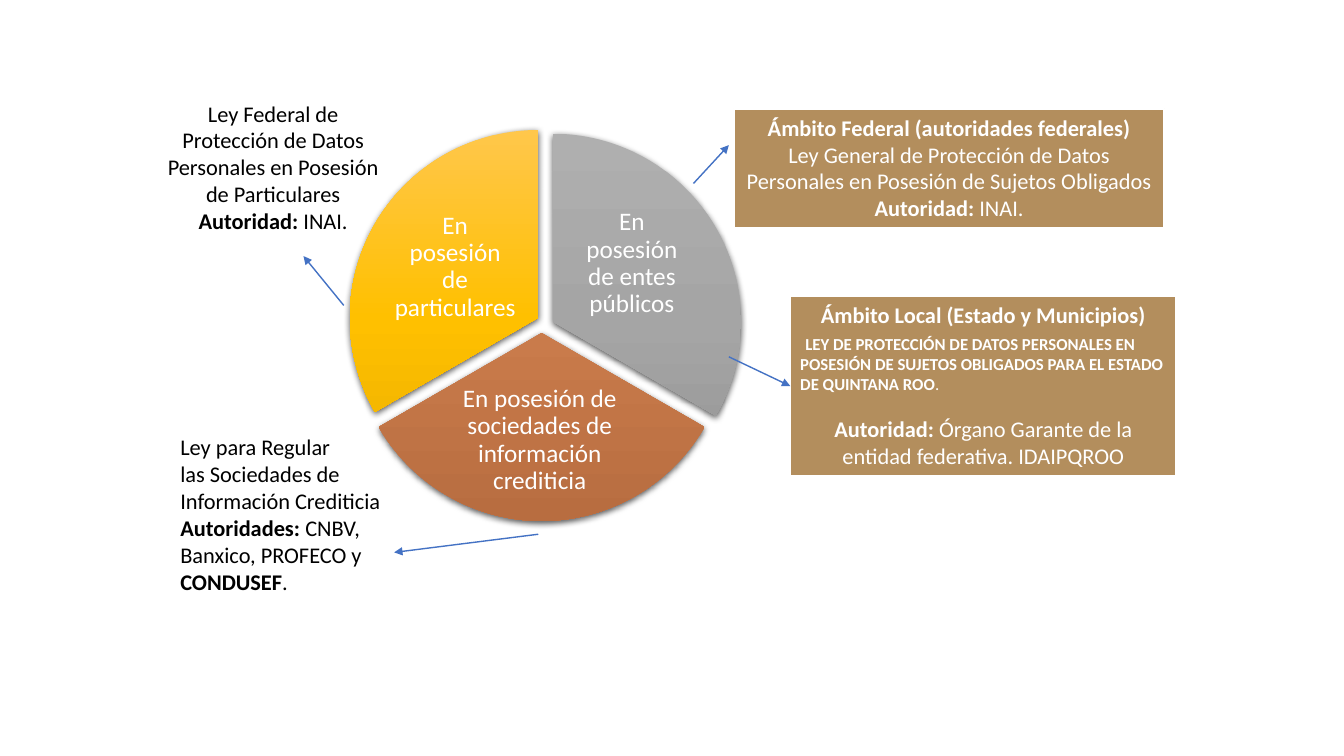
from lxml import etree
from pptx import Presentation
from pptx.dml.color import RGBColor
from pptx.enum.shapes import MSO_CONNECTOR, MSO_SHAPE
from pptx.enum.text import MSO_ANCHOR, PP_ALIGN
from pptx.oxml import parse_xml
from pptx.oxml.ns import nsdecls, qn
from pptx.util import Inches, Pt

LEFT, CENTER = PP_ALIGN.LEFT, PP_ALIGN.CENTER
TOP, MIDDLE = MSO_ANCHOR.TOP, MSO_ANCHOR.MIDDLE
PIE, RECT = MSO_SHAPE.PIE, MSO_SHAPE.RECTANGLE
STRAIGHT = MSO_CONNECTOR.STRAIGHT
W, H = Inches(13.33), Inches(7.5)
FONT = "Calibri"
GOLD, BLUE, WHITE, BLACK = "B38E5D", "4472C4", "FFFFFF", "000000"
LEFT_SIDE = 1  # connection site of a rectangle

# start and end angle, offset and label box in shares of the diameter
WEDGES = [
    ("En posesión de entes públicos", 270, 30, (0.04, 0.01),
     (0.58, 0.19, 0.34, 0.33), ("AFAFAF", "A5A5A5", "939393")),
    ("En posesión de sociedades de información crediticia", 30, 150, (0.01, 0.04),
     (0.28, 0.67, 0.45, 0.31), ("CF8159", "C97B4B", "B86D40")),
    ("En posesión de particulares", 150, 270, (0, 0),
     (0.11, 0.2, 0.34, 0.33), ("FFC74B", "FFC000", "E8AE00")),
]


def rgb(color):
    return RGBColor.from_string(color)


def point(x, y):
    """Turn percentages of the slide into lengths."""
    return int(W * x / 100), int(H * y / 100)


def box(x, y, w, h):
    return point(x, y) + point(w, h)


def write(tf, paragraphs, size=16, color=BLACK, align=CENTER, anchor=TOP,
          spacing=1.0, inset=None):
    """Each paragraph is a list of (text, bold) runs and a dict of its own format."""
    tf.word_wrap, tf.vertical_anchor = True, anchor
    if inset is not None:
        tf.margin_left = tf.margin_right = tf.margin_top = tf.margin_bottom = inset
    for i, (runs, own) in enumerate(paragraphs):
        p = tf.paragraphs[0] if i == 0 else tf.add_paragraph()
        p.alignment, p.line_spacing = own.get("align", align), spacing
        if "before" in own:
            p.space_before = Pt(own["before"])
        if "indent" in own:
            p._p.get_or_add_pPr().set("indent", str(Inches(own["indent"])))
        for text, bold in runs:
            r = p.add_run()
            r.text = text
            r.font.name, r.font.size = FONT, Pt(own.get("size", size))
            r.font.bold, r.font.color.rgb = bold, rgb(color)


def shade(shape, colors):
    """Vertical gradient and a soft shadow below the shape."""
    shape.line.fill.background()
    shape.fill.gradient()
    grad = shape._element.spPr.find(qn("a:gradFill"))
    stops = "".join(f'<a:gs pos="{i * 50000}"><a:srgbClr val="{c}"/></a:gs>'
                    for i, c in enumerate(colors))
    grad.getparent().replace(grad, parse_xml(
        f'<a:gradFill {nsdecls("a")} rotWithShape="1"><a:gsLst>{stops}</a:gsLst>'
        '<a:lin ang="5400000" scaled="0"/></a:gradFill>'))
    shape._element.spPr.append(parse_xml(
        f'<a:effectLst {nsdecls("a")}><a:outerShdw blurRad="{Pt(4.5)}" dist="{Pt(1.5)}" '
        'dir="5400000" algn="ctr" rotWithShape="0"><a:srgbClr val="000000">'
        '<a:alpha val="63000"/></a:srgbClr></a:outerShdw></a:effectLst>'))


def pie(s, x, y, d):
    for text, start, end, (dx, dy), (lx, ly, lw, lh), colors in WEDGES:
        sp = s.shapes.add_shape(PIE, int(x + dx * d), int(y + dy * d), d, d)
        sp.adjustments[0], sp.adjustments[1] = start * 0.6, end * 0.6
        shade(sp, colors)
        label = s.shapes.add_textbox(int(x + lx * d), int(y + ly * d),
                                     int(lw * d), int(lh * d))
        write(label.text_frame, [([(text, False)], {})], size=18, color=WHITE,
              anchor=MIDDLE, spacing=0.9, inset=Inches(0.03))


def note(s, area, paragraphs, align=CENTER):
    sp = s.shapes.add_textbox(*area)
    write(sp.text_frame, paragraphs, align=align)


def panel(s, area, paragraphs):
    sp = s.shapes.add_shape(RECT, *area)
    sp.shadow.inherit = False
    sp.fill.solid()
    sp.fill.fore_color.rgb = rgb(GOLD)
    sp.line.color.rgb, sp.line.width = rgb(WHITE), Pt(1.5)
    write(sp.text_frame, paragraphs, color=WHITE)
    return sp


def arrow(s, start, end, target=None):
    c = s.shapes.add_connector(STRAIGHT, *start, *end)
    if target is not None:
        c.end_connect(target, LEFT_SIDE)
    c.line.color.rgb, c.line.width = rgb(BLUE), Pt(1)
    etree.SubElement(c.line._get_or_add_ln(), qn("a:tailEnd"), type="triangle")
    etree.SubElement(c._element.spPr, qn("a:effectLst"))


def main():
    prs = Presentation()
    prs.slide_width, prs.slide_height = W, H
    s = prs.slides.add_slide(prs.slide_layouts[6])

    pie(s, *point(26.03, 17.2), Inches(3.73))

    note(s, box(11.33, 12.53, 18, 19.73), [
        ([("Ley Federal de Protección de Datos Personales en Posesión de Particulares",
           False)], {}),
        ([("Autoridad:", True), (" INAI.", False)], {}),
    ])
    note(s, box(12.68, 56.67, 19.65, 22.93), [
        ([("Ley para Regular", False)], {}),
        ([("las Sociedades de Información Crediticia", False)], {}),
        ([("Autoridades:", True), (" CNBV, Banxico, PROFECO y ", False),
          ("CONDUSEF", True), (".", False)], {}),
    ], align=LEFT)
    panel(s, box(54.6, 14.4, 32.03, 15.73), [
        ([("Ámbito Federal (autoridades federales)", True)], {}),
        ([("Ley General de Protección de Datos Personales en Posesión de Sujetos Obligados",
           False)], {}),
        ([("Autoridad:", True), (" INAI.", False)], {}),
    ])
    local = panel(s, box(58.8, 39.2, 28.73, 23.73), [
        ([("Ámbito Local (Estado y Municipios)", True)], {}),
        ([("LEY DE PROTECCIÓN DE DATOS PERSONALES EN POSESIÓN DE SUJETOS OBLIGADOS "
           "PARA EL ESTADO DE QUINTANA ROO", True), (".", False)],
         {"align": LEFT, "size": 12, "indent": 0.05, "before": 4}),
        ([("Autoridad:", True),
          (" Órgano Garante de la entidad federativa. IDAIPQROO", False)], {"before": 15}),
    ])

    arrow(s, point(54.23, 47.2), point(58.8, 51.07), local)
    arrow(s, point(51.6, 24.27), point(54.23, 19.2))
    arrow(s, point(25.58, 40.4), point(22.58, 33.87))
    arrow(s, point(40.05, 70.67), point(29.33, 73.07))
    prs.save("out.pptx")


if __name__ == "__main__":
    main()
